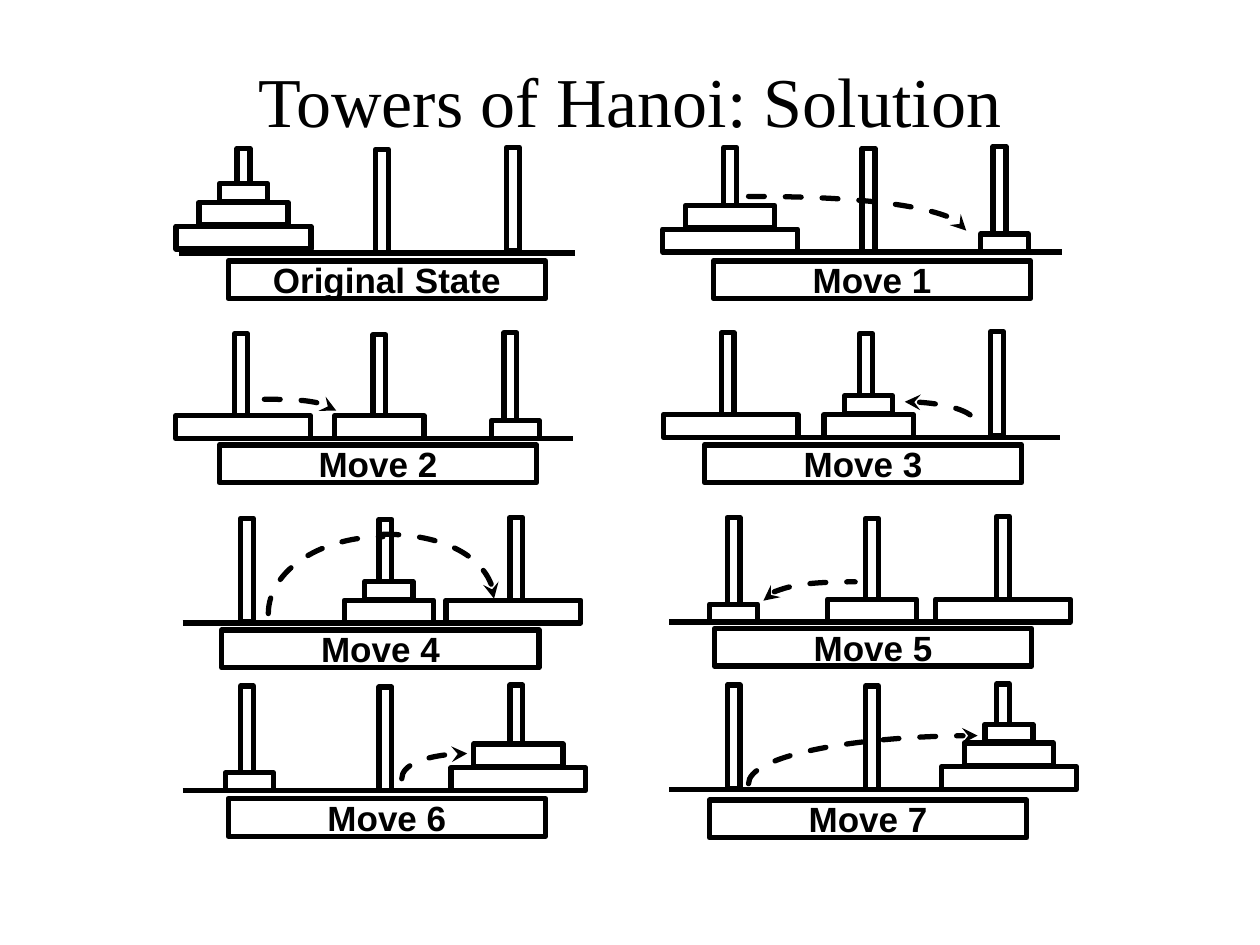
from lxml.etree import SubElement
from pptx import Presentation
from pptx.dml.color import RGBColor
from pptx.enum.dml import MSO_LINE
from pptx.enum.shapes import MSO_CONNECTOR, MSO_SHAPE
from pptx.enum.text import MSO_ANCHOR, PP_ALIGN
from pptx.oxml.ns import qn
from pptx.util import Cm, Pt

# Lengths in cm
COLUMN_PITCH = 9.81
BASE_LENGTH = 7.99
PEG_WIDTH, PEG_HEIGHT = 0.26, 2.09
PEGS = [(1.17, 2.11), (3.96, 2.09), (6.6, 2.13)]  # offset from base start, rise
DISCS = {"S": (0.97, 0.36), "M": (1.8, 0.46), "L": (2.72, 0.46)}
DISC_GAP = 0.02
LABEL_WIDTH, LABEL_HEIGHT = 6.4, 0.76

# Left end and height of the base line in each row
ROWS = [(3.61, 5.1), (3.56, 8.84), (3.68, 12.56), (3.68, 15.94)]

# Caption, its left and top, then stacks: peg, discs from the bottom, shift, lift
STATES = [
    ("Original State", 4.6, 5.26, [(0, "LMS", 0, 0.08)]),
    ("Move 1", 14.38, 5.26, [(0, "LM", 0, 0), (2, "S", 0.1, 0)]),
    ("Move 2", 4.42, 8.97, [(0, "L", 0.04, 0), (1, "M", 0, 0), (2, "S", 0.1, 0)]),
    ("Move 3", 14.2, 8.97, [(0, "L", 0.06, 0), (1, "MS", 0.05, 0)]),
    ("Move 4", 4.47, 12.7, [(1, "MS", 0.07, 0), (2, "L", -0.06, 0)]),
    ("Move 5", 14.4, 12.67, [(0, "S", 0, 0), (1, "M", 0, 0), (2, "L", 0, 0)]),
    ("Move 6", 4.6, 16.1, [(0, "S", 0.05, 0), (2, "LM", 0.04, 0)]),
    ("Move 7", 14.3, 16.13, [(2, "LMS", 0.12, 0)]),
]

# Quarter ellipses in a unit box: start, two control points, end
FALLING = [(0, 0), (0.55, 0), (1, 0.45), (1, 1)]
RISING = [(0, 1), (0, 0.45), (0.45, 0), (1, 0)]
ARCS = [
    (FALLING, 15.09, 3.96, 4.39, 0.69, "tailEnd"),
    (FALLING, 5.33, 8.05, 1.45, 0.23, "tailEnd"),
    (FALLING, 18.24, 8.1, 1.45, 0.48, "headEnd"),
    (RISING, 5.41, 10.82, 2.31, 1.55, None),
    (FALLING, 7.72, 10.77, 2.24, 1.3, "tailEnd"),
    (RISING, 15.39, 11.73, 1.85, 0.38, "headEnd"),
    (RISING, 8.1, 15.19, 1.32, 0.51, "tailEnd"),
    (RISING, 15.09, 14.83, 4.62, 0.97, "tailEnd"),
]


def color(value):
    return RGBColor.from_string(value)


class Board:
    ink, paper = "000000", "FFFFFF"
    line_width = Pt(3)

    def __init__(self, slide):
        self.s = slide

    def outline(self, sp):
        sp.line.color.rgb = color(self.ink)
        sp.line.width = self.line_width

    def set_text(self, sp, text, font, size, bold=False):
        tf = sp.text_frame
        tf.text = text
        tf.vertical_anchor = MSO_ANCHOR.MIDDLE
        p = tf.paragraphs[0]
        p.alignment = PP_ALIGN.CENTER
        r = p.runs[0]
        r.font.name, r.font.size, r.font.bold = font, Pt(size), bold
        r.font.color.rgb = color(self.ink)

    def title(self, text, x, y, w, h):
        sp = self.s.shapes.add_textbox(Cm(x), Cm(y), Cm(w), Cm(h))
        sp.text_frame.word_wrap = True
        self.set_text(sp, text, "Times New Roman", 40)

    def box(self, x, y, w, h, filled=False):
        sp = self.s.shapes.add_shape(MSO_SHAPE.RECTANGLE, Cm(x), Cm(y), Cm(w), Cm(h))
        sp.shadow.inherit = False
        if filled:
            sp.fill.solid()
            sp.fill.fore_color.rgb = color(self.paper)
        else:
            sp.fill.background()
        self.outline(sp)
        return sp

    def label(self, text, x, y):
        sp = self.box(x, y, LABEL_WIDTH, LABEL_HEIGHT)
        self.set_text(sp, text, "Arial", 20, bold=True)
        sp.text_frame.word_wrap = False

    def base(self, x, y):
        c = self.s.shapes.add_connector(
            MSO_CONNECTOR.STRAIGHT, Cm(x), Cm(y), Cm(x + BASE_LENGTH), Cm(y))
        self.outline(c)
        SubElement(c._element.spPr, qn("a:effectLst"))

    def pegs(self, x, y):
        self.base(x, y)
        for offset, rise in PEGS:
            self.box(x + offset, y - rise, PEG_WIDTH, PEG_HEIGHT)

    def stack(self, center, bottom, discs):
        for disc in discs:
            w, h = DISCS[disc]
            self.box(center - w / 2, bottom - h, w, h, filled=True)
            bottom -= h + DISC_GAP

    def arc(self, curve, x, y, w, h, arrow):
        start, *rest = [(Cm(x + u * w), Cm(y + v * h)) for u, v in curve]
        builder = self.s.shapes.build_freeform(*start)
        builder.add_line_segments(rest, close=False)
        sp = builder.convert_to_shape()
        sp.shadow.inherit = False
        sp.fill.background()
        self.outline(sp)
        sp.line.dash_style = MSO_LINE.DASH
        # Turn the three segments into one Bezier curve
        outline = sp._element.find(".//" + qn("a:path"))
        bezier = SubElement(outline, qn("a:cubicBezTo"))
        for segment in outline.findall(qn("a:lnTo")):
            bezier.append(segment[0])
            outline.remove(segment)
        # Round dashes and arrowhead
        ln = sp._element.spPr.find(qn("a:ln"))
        ln.set("cap", "rnd")
        if arrow:
            SubElement(ln, qn("a:" + arrow), type="stealth", w="med", len="med")


def main():
    prs = Presentation()
    prs.slide_width, prs.slide_height = Cm(25.4), Cm(19.05)
    board = Board(prs.slides.add_slide(prs.slide_layouts[6]))

    # Pegs, discs and caption of every state
    for i, (caption, label_x, label_y, stacks) in enumerate(STATES):
        row, column = divmod(i, 2)
        x, y = ROWS[row]
        x += column * COLUMN_PITCH
        y -= column * 0.02
        board.pegs(x, y)
        for peg, discs, shift, lift in stacks:
            center = x + PEGS[peg][0] + PEG_WIDTH / 2 + shift
            board.stack(center, y - lift, discs)
        board.label(caption, label_x, label_y)

    # Paths of the moved discs
    for arc in ARCS:
        board.arc(*arc)

    # Title
    board.title("Towers of Hanoi: Solution", 1.9, 1.27, 21.6, 1.47)
    prs.save("out.pptx")


if __name__ == "__main__":
    main()
